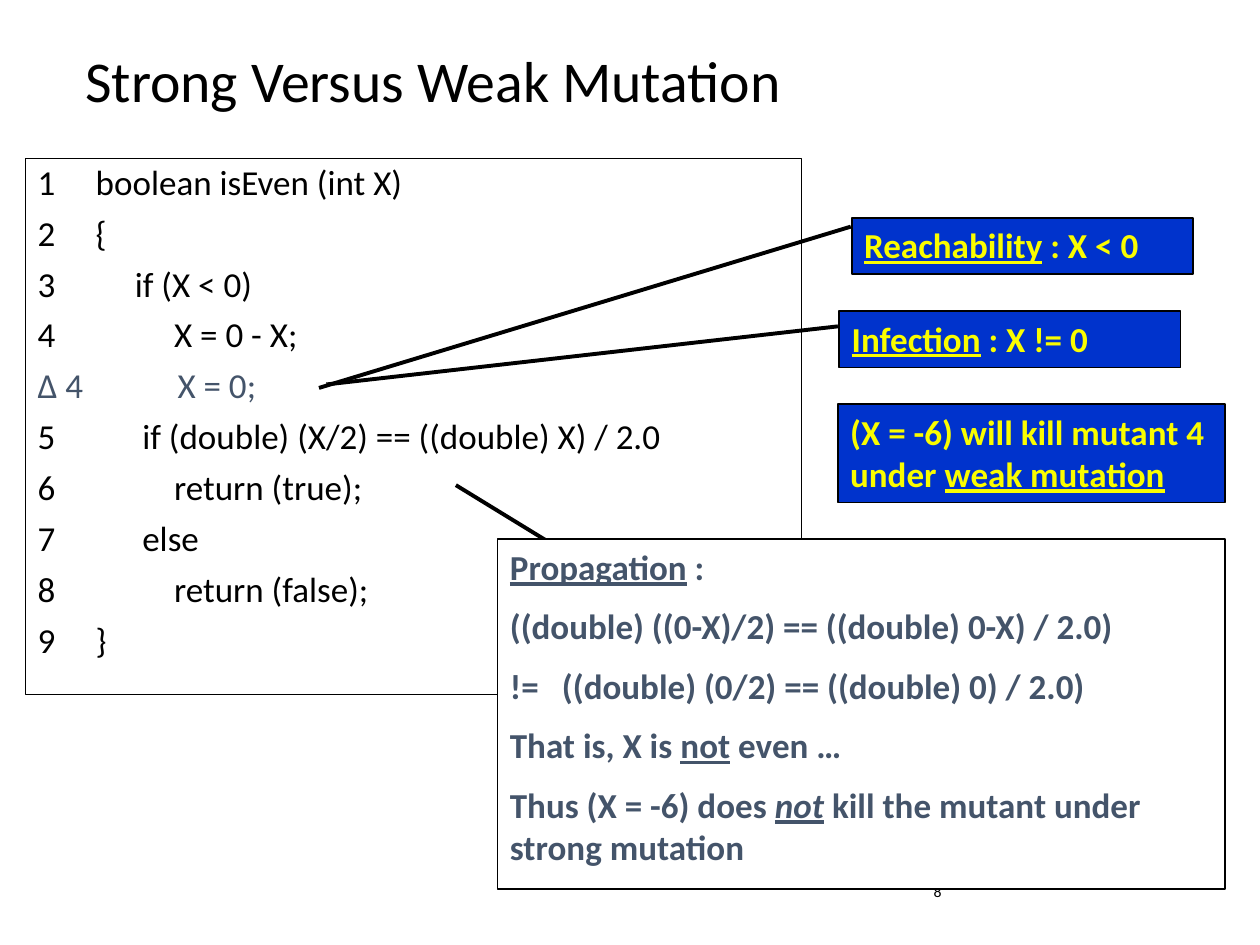
from dataclasses import dataclass

from lxml import etree
from pptx import Presentation
from pptx.dml.color import RGBColor
from pptx.enum.shapes import MSO_CONNECTOR, MSO_SHAPE
from pptx.enum.text import MSO_ANCHOR, PP_ALIGN
from pptx.oxml.ns import qn
from pptx.util import Cm, Pt

RECTANGLE = MSO_SHAPE.RECTANGLE
STRAIGHT = MSO_CONNECTOR.STRAIGHT
TOP, MIDDLE = MSO_ANCHOR.TOP, MSO_ANCHOR.MIDDLE
LEFT = PP_ALIGN.LEFT


@dataclass(frozen=True)
class Theme:
    font: str = "Calibri"
    black: RGBColor = RGBColor(0x00, 0x00, 0x00)
    white: RGBColor = RGBColor(0xFF, 0xFF, 0xFF)
    blue: RGBColor = RGBColor(0x00, 0x33, 0xCC)
    yellow: RGBColor = RGBColor(0xFA, 0xFD, 0x00)
    slate: RGBColor = RGBColor(0x44, 0x54, 0x6A)
    title_size: float = 33
    text_size: float = 20
    number_size: float = 9
    code_border: float = 0.75
    callout_border: float = 1
    pointer_width: float = 2.25


THEME = Theme()
UNDERLINE = {"underline": True}
EMPHASIS = {"underline": True, "italic": True}

# Code lines: number, tab position in cm, code
CODE = [
    ("1", 1.17, "boolean isEven (int X)"),
    ("2", 1.17, "{"),
    ("3", 1.96, "if (X < 0)"),
    ("4", 2.75, "X = 0 - X;"),
    ("∆ 4", 2.82, "X = 0;"),
    ("5", 2.11, "if (double) (X/2) == ((double) X) / 2.0"),
    ("6", 2.75, "return (true);"),
    ("7", 2.11, "else"),
    ("8", 2.75, "return (false);"),
    ("9", 1.17, "}"),
]

# Callout paragraphs: runs of text and format
REACHABILITY = [[("Reachability", UNDERLINE), (" : X < 0", {})]]
INFECTION = [[("Infection", UNDERLINE), (" : X != 0", {})]]
WEAK_MUTATION = [[("(X = -6) will kill mutant 4 under ", {}), ("weak mutation", UNDERLINE)]]
PROPAGATION = [
    [("Propagation", UNDERLINE), (" :", {})],
    [("((double) ((0-X)/2) == ((double) 0-X) / 2.0)", {})],
    [("!=\t((double) (0/2) == ((double) 0) / 2.0)", {})],
    [("That is, X is ", {}), ("not", UNDERLINE), (" even …", {})],
    [("Thus (X = -6) does ", {}), ("not", EMPHASIS),
     (" kill the mutant under strong mutation", {})],
]
NOT_EQUAL_TAB = 1.05

# Boxes in cm: left, top, width, height
TITLE_BOX = (1.47, -0.15, 21.89, 3.68)
CODE_BOX = (0.51, 3.2, 15.65, 10.8)
NUMBER_BOX = (18.57, 17.65, 6.83, 1.02)
REACHABILITY_BOX = (17.17, 4.39, 6.88, 1.14)
INFECTION_BOX = (16.92, 6.27, 6.88, 1.14)
WEAK_BOX = (16.89, 8.15, 7.8, 1.98)
PROPAGATION_BOX = (10.03, 10.87, 14.66, 7.06)


def cm(values):
    return [Cm(value) for value in values]


def add_run(paragraph, text, size, color, **formats):
    run = paragraph.add_run()
    run.text = text
    run.font.color.rgb = color
    for name, value in {"name": THEME.font, "size": Pt(size), **formats}.items():
        setattr(run.font, name, value)


def add_tab(paragraph, position):
    properties = paragraph._p.get_or_add_pPr()
    tabs = etree.SubElement(properties, qn("a:tabLst"))
    etree.SubElement(tabs, qn("a:tab"), pos=str(Cm(position)), algn="l")


def add_paragraph(frame, index, **formats):
    paragraph = frame.add_paragraph() if index else frame.paragraphs[0]
    for name, value in {"alignment": LEFT, **formats}.items():
        setattr(paragraph, name, value)
    return paragraph


def add_panel(slide, box, fill, border):
    panel = slide.shapes.add_shape(RECTANGLE, *cm(box))
    panel.shadow.inherit = False
    panel.fill.solid()
    panel.fill.fore_color.rgb = fill
    panel.line.color.rgb = THEME.black
    panel.line.width = Pt(border)
    frame = panel.text_frame
    frame.word_wrap = True
    frame.vertical_anchor = TOP
    return frame


def add_label(slide, box, text, size, anchor):
    frame = slide.shapes.add_textbox(*cm(box)).text_frame
    frame.word_wrap = True
    frame.vertical_anchor = anchor
    add_run(add_paragraph(frame, 0), text, size, THEME.black)
    return frame


def add_title(slide, box):
    frame = add_label(slide, box, "Strong Versus Weak Mutation", THEME.title_size, MIDDLE)
    frame.paragraphs[0].line_spacing = 0.9


def add_code(slide, box):
    frame = add_panel(slide, box, THEME.white, THEME.code_border)
    for index, (number, tab, code) in enumerate(CODE):
        paragraph = add_paragraph(frame, index, line_spacing=0.9, space_before=Pt(7.5))
        add_tab(paragraph, tab)
        color = THEME.slate if number.startswith("∆") else THEME.black
        add_run(paragraph, f"{number}\t{code}", THEME.text_size, color)


def add_pointer(slide, box, start, target):
    """Line from an offset in the callout box to an offset in the code box."""
    ends = (box[0] + start[0], box[1] + start[1],
            CODE_BOX[0] + target[0], CODE_BOX[1] + target[1])
    pointer = slide.shapes.add_connector(STRAIGHT, *cm(ends))
    pointer.line.color.rgb = THEME.black
    pointer.line.width = Pt(THEME.pointer_width)
    etree.SubElement(pointer._element.spPr, qn("a:effectLst"))


def add_callout(slide, box, paragraphs, fill, color):
    frame = add_panel(slide, box, fill, THEME.callout_border)
    for index, runs in enumerate(paragraphs):
        paragraph = add_paragraph(frame, index, space_before=Pt(THEME.text_size / 2))
        if any("\t" in text for text, _ in runs):
            add_tab(paragraph, NOT_EQUAL_TAB)
        for text, formats in runs:
            add_run(paragraph, text, THEME.text_size, color, bold=True, **formats)


def main():
    deck = Presentation()
    deck.slide_width, deck.slide_height = Cm(25.4), Cm(19.05)
    slide = deck.slides.add_slide(deck.slide_layouts[6])

    # Title, code and slide number
    add_title(slide, TITLE_BOX)
    add_code(slide, CODE_BOX)
    add_label(slide, NUMBER_BOX, "8", THEME.number_size, TOP)

    # Conditions met by the mutant
    add_pointer(slide, REACHABILITY_BOX, (-0.02, 0.18), (5.92, 4.62))
    add_pointer(slide, INFECTION_BOX, (-0.03, 0.31), (6.07, 4.55))
    for box, paragraphs in ((REACHABILITY_BOX, REACHABILITY),
                            (INFECTION_BOX, INFECTION),
                            (WEAK_BOX, WEAK_MUTATION)):
        add_callout(slide, box, paragraphs, THEME.blue, THEME.yellow)

    # Propagation, which fails
    add_pointer(slide, PROPAGATION_BOX, (2.85, 1.17), (8.68, 6.58))
    add_callout(slide, PROPAGATION_BOX, PROPAGATION, THEME.white, THEME.slate)

    deck.save("out.pptx")


if __name__ == "__main__":
    main()
